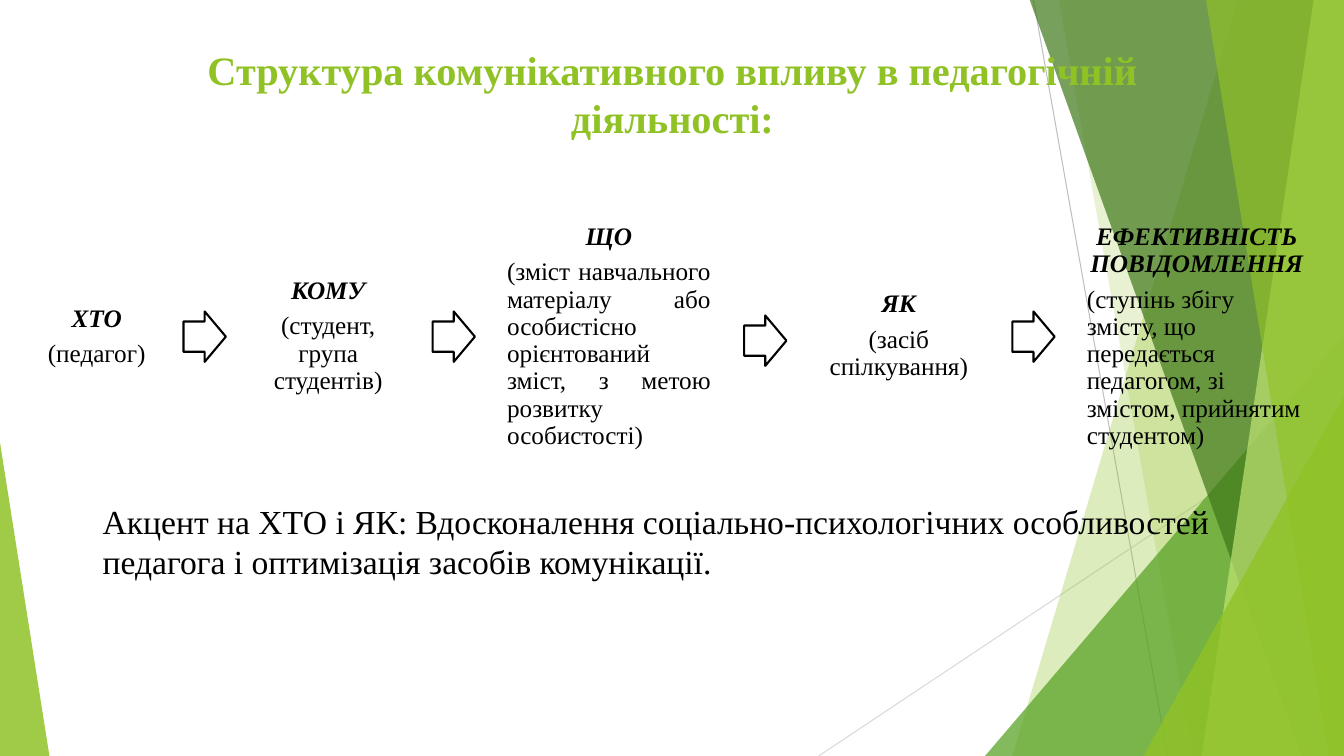
from dataclasses import dataclass

from lxml import etree
from pptx import Presentation, util as u
from pptx.dml.color import RGBColor
from pptx.enum import shapes, text
from pptx.oxml.ns import qn

SCALE = 9144  # EMU in one px, 100 px to the inch
WIDTH, HEIGHT = 1333, 750


@dataclass(frozen=True)
class Theme:
    font: str = "Times New Roman"
    lime: str = "90C226"
    green: str = "54A021"
    forest: str = "3F7819"
    pale: str = "C0E474"
    ink: str = "000000"
    paper: str = "FFFFFF"
    ray: str = "BFBFBF"
    faint_ray: str = "D9D9D9"
    title_size: float = 28.8
    note_size: float = 24
    step_size: float = 18


def px(*lengths):
    return [u.Emu(length * SCALE) for length in lengths]


def write(paragraph, words, *, font, size, color, bold=False, italic=False,
          align=text.PP_ALIGN.LEFT, spacing=None, after=None):
    """Put one formatted run into a paragraph."""
    paragraph.alignment = align
    paragraph.line_spacing = spacing
    if after is not None:
        paragraph.space_after = u.Pt(after)
    run = paragraph.add_run()
    run.text = words
    run.font.name = font
    run.font.size = u.Pt(size)
    run.font.bold = bold
    run.font.italic = italic
    run.font.color.rgb = RGBColor.from_string(color)


class SlideBuilder:
    def __init__(self, slide, theme):
        self.slide, self.theme = slide, theme

    def paint(self, shape, color, opacity=100):
        shape.shadow.inherit = False
        shape.fill.solid()
        shape.fill.fore_color.rgb = RGBColor.from_string(color)
        shape.line.fill.background()
        if opacity < 100:
            tint = shape.element.spPr.find(qn("a:solidFill"))[0]
            etree.SubElement(tint, qn("a:alpha"), val=str(opacity * 1000))

    def ray(self, start, end, color):
        line = self.slide.shapes.add_connector(
            shapes.MSO_CONNECTOR.STRAIGHT, *px(*start, *end))
        line.line.color.rgb = RGBColor.from_string(color)
        line.line.width = u.Pt(0.75)
        etree.SubElement(line.element.spPr, qn("a:effectLst"))

    def band(self, top_left, bottom_left, color, opacity, top_right=WIDTH):
        """A full-height facet that reaches the right edge of the slide."""
        outline = self.slide.shapes.build_freeform(top_left, -1, scale=SCALE)
        outline.add_line_segments(
            [(top_right, -1), (WIDTH, HEIGHT), (bottom_left, HEIGHT)])
        self.paint(outline.convert_to_shape(), color, opacity)

    def triangle(self, box, apex, color, opacity):
        facet = self.slide.shapes.add_shape(
            shapes.MSO_SHAPE.ISOSCELES_TRIANGLE, *px(*box))
        facet.adjustments[0] = apex
        self.paint(facet, color, opacity)

    def arrow(self, left, top):
        arrow = self.slide.shapes.add_shape(
            shapes.MSO_SHAPE.RIGHT_ARROW, *px(left, top, 42, 50))
        arrow.adjustments[0], arrow.adjustments[1] = 0.6, 0.5
        self.paint(arrow, self.theme.paper)
        arrow.line.color.rgb = RGBColor.from_string(self.theme.ink)
        arrow.line.width = u.Pt(1.5)

    def frame(self, box, anchor=text.MSO_ANCHOR.TOP, inset=None):
        frame = self.slide.shapes.add_textbox(*px(*box)).text_frame
        frame.word_wrap = True
        frame.vertical_anchor = anchor
        if inset is not None:
            frame.margin_left, frame.margin_top, frame.margin_right, frame.margin_bottom = px(*[inset] * 4)
        return frame

    def paragraph(self, box, words, **style):
        write(self.frame(box).paragraphs[0], words, font=self.theme.font, **style)

    def step(self, box, question, answer, align):
        frame = self.frame(box, text.MSO_ANCHOR.MIDDLE, 7)
        style = dict(font=self.theme.font, size=self.theme.step_size,
                     color=self.theme.ink, spacing=0.9, after=6)
        write(frame.paragraphs[0], question, bold=True, italic=True,
              align=text.PP_ALIGN.CENTER, **style)
        write(frame.add_paragraph(), answer, align=align, **style)


def main():
    deck = Presentation()
    deck.slide_width, deck.slide_height = px(WIDTH, HEIGHT)
    theme = Theme()
    page = SlideBuilder(deck.slides.add_slide(deck.slide_layouts[6]), theme)

    # Faceted background
    page.ray((1025, 0), (1158, HEIGHT), theme.ray)
    page.ray((WIDTH, 403), (812, HEIGHT), theme.faint_ray)
    page.band(1228, 1004, theme.lime, 30)
    page.band(1050, 1183, theme.lime, 20)
    page.triangle((977, 333, 356, 417), 1, theme.green, 72)
    page.band(1021, 1291, theme.forest, 70)
    page.band(1303, 1192, theme.pale, 70)
    page.band(1196, 1318, theme.lime, 65)
    page.triangle((1134, 393, 199, 357), 1, theme.lime, 80)
    page.triangle((0, 439, 49, 311), 0, theme.lime, 85)

    # Title
    page.paragraph((92, 40, 1150, 59),
                   "Структура комунікативного впливу в педагогічній діяльності:",
                   size=theme.title_size, color=theme.lime, bold=True,
                   align=text.PP_ALIGN.CENTER)

    # Chain of communication steps
    center, justify, left = (text.PP_ALIGN.CENTER, text.PP_ALIGN.JUSTIFY,
                             text.PP_ALIGN.LEFT)
    steps = [
        ((33, 290, 126, 88), "ХТО", "(педагог)", center),
        ((245, 278, 161, 111), "КОМУ", "(студент, група студентів)", center),
        ((496, 224, 216, 220), "ЩО",
         "(зміст навчального матеріалу або особистісно орієнтований зміст, "
         "з метою розвитку особистості)", justify),
        ((803, 270, 177, 127), "ЯК", "(засіб спілкування)", center),
        ((1071, 215, 232, 238), "ЕФЕКТИВНІСТЬ ПОВІДОМЛЕННЯ",
         "(ступінь збігу змісту, що передається педагогом, зі змістом, "
         "прийнятим студентом)", left),
    ]
    for step in steps:
        page.step(*step)
    for arrow_left, arrow_top in ((182, 309), (429, 309), (738, 313), (1004, 309)):
        page.arrow(arrow_left, arrow_top)

    # Closing note
    page.paragraph((92, 492, 1150, 91),
                   "Акцент на ХТО і ЯК: Вдосконалення соціально-психологічних "
                   "особливостей педагога і оптимізація засобів комунікації.",
                   size=theme.note_size, color=theme.ink)

    deck.save("out.pptx")


if __name__ == "__main__":
    main()
